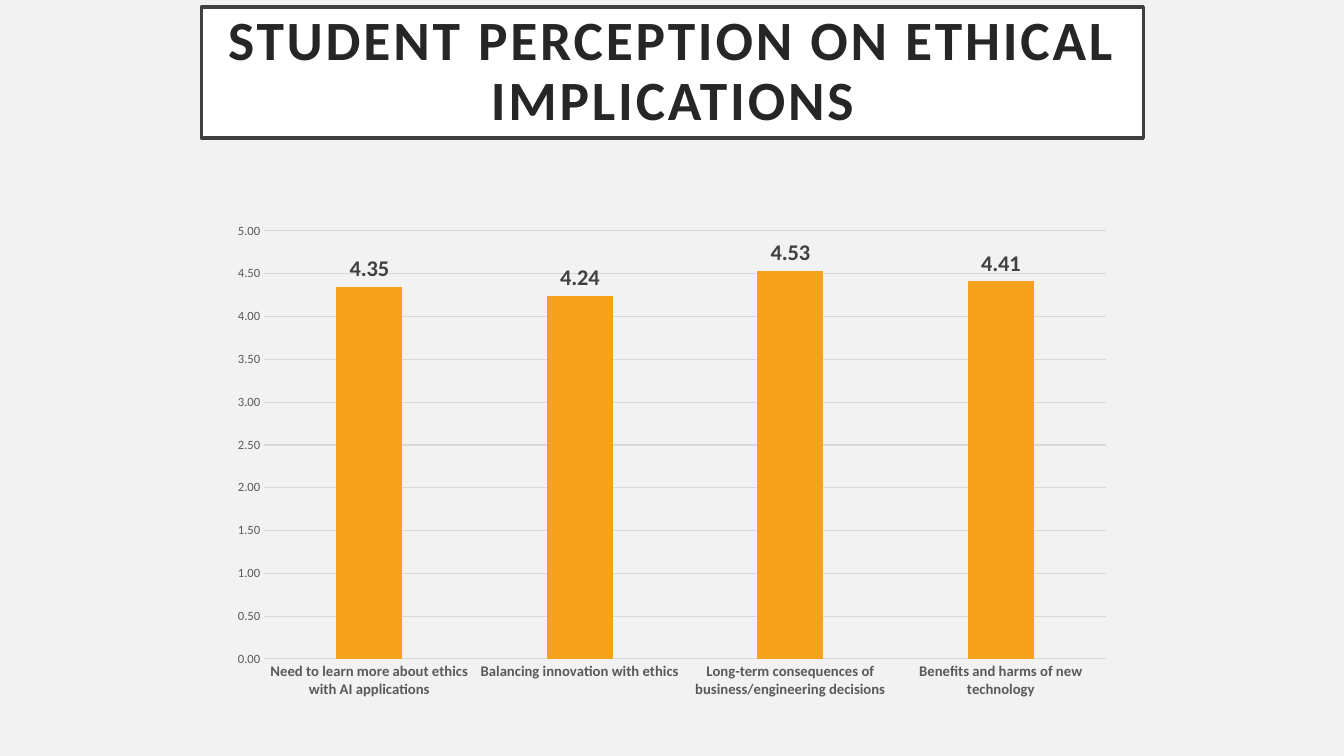
from pptx import Presentation
from pptx.chart.data import CategoryChartData
from pptx.dml.color import RGBColor
from pptx.enum.chart import XL_CHART_TYPE as ChartType, XL_LABEL_POSITION as LabelPos, XL_TICK_MARK as Tick
from pptx.enum.shapes import MSO_SHAPE as Shape
from pptx.enum.text import MSO_ANCHOR as Anchor, PP_ALIGN as Align
from pptx.util import Inches, Pt

# Content
TITLE = "STUDENT PERCEPTION ON ETHICAL IMPLICATIONS"
RATINGS = {
    "Need to learn more about ethics with AI applications": 4.35,
    "Balancing innovation with ethics": 4.24,
    "Long-term consequences of business/engineering decisions": 4.53,
    "Benefits and harms of new technology": 4.41,
}
COLORS = {
    "background": "F2F2F2", "box": "FFFFFF", "border": "404040", "title": "262626",
    "bar": "F6A21D", "value": "404040", "axis": "595959", "grid": "D9D9D9",
}
FONT = "Calibri"
TITLE_BOX = (2, 0.07, 9.34, 1.3)
CHART_BOX = (2.18, 2.12, 8.97, 4.91)


def rgb(name):
    return RGBColor.from_string(COLORS[name])


def style_font(font, size, color, bold=False):
    font.name, font.size, font.bold = FONT, Pt(size), bold
    font.color.rgb = rgb(color)


def style_line(line, color, width):
    line.color.rgb = rgb(color)
    line.width = Pt(width)


def add_text(sp, text, size, color, bold=False, inset=0.2, line_spacing=0.9, tracking=2):
    tf = sp.text_frame
    tf.word_wrap = True
    tf.vertical_anchor = Anchor.MIDDLE
    tf.margin_left = tf.margin_top = tf.margin_right = tf.margin_bottom = Inches(inset)
    p = tf.paragraphs[0]
    p.alignment, p.line_spacing = Align.CENTER, line_spacing
    r = p.add_run()
    r.text = text
    style_font(r.font, size, color, bold)
    r.font._element.set("spc", str(tracking * 100))


prs = Presentation()
prs.slide_width, prs.slide_height = Inches(13.33), Inches(7.5)
s = prs.slides.add_slide(prs.slide_layouts[6])
s.background.fill.solid()
s.background.fill.fore_color.rgb = rgb("background")

# Title box
sp = s.shapes.add_shape(Shape.RECTANGLE, *map(Inches, TITLE_BOX))
sp.shadow.inherit = False
sp.fill.solid()
sp.fill.fore_color.rgb = rgb("box")
style_line(sp.line, "border", 2.5)
add_text(sp, TITLE, size=39.6, color="title", bold=True)

# Column chart
data = CategoryChartData(number_format="0.00")
data.categories = list(RATINGS)
data.add_series("Series 1", list(RATINGS.values()))
chart = s.shapes.add_chart(ChartType.COLUMN_CLUSTERED, *map(Inches, CHART_BOX), data).chart
chart.has_legend = chart.has_title = False
chart.font.name, chart.font.size = FONT, Pt(10)

# Bars and value labels
plot = chart.plots[0]
plot.gap_width, plot.overlap, plot.vary_by_categories = 219, -27, False
bars = plot.series[0]
bars.format.fill.solid()
bars.format.fill.fore_color.rgb = rgb("bar")
labels = bars.data_labels
labels.show_value = True
labels.position = LabelPos.OUTSIDE_END
labels.number_format, labels.number_format_is_linked = "0.00", False
style_font(labels.font, 16, "value", bold=True)

# Axes
cat_axis, val_axis = chart.category_axis, chart.value_axis
for axis, size, bold in ((cat_axis, 10.5, True), (val_axis, 9, False)):
    axis.major_tick_mark = axis.minor_tick_mark = Tick.NONE
    style_font(axis.tick_labels.font, size, "axis", bold)
style_line(cat_axis.format.line, "grid", 0.75)
val_axis.format.line.fill.background()
val_axis.minimum_scale, val_axis.maximum_scale, val_axis.major_unit = 0, 5, 0.5
val_axis.tick_labels.number_format = "0.00"
val_axis.tick_labels.number_format_is_linked = False
val_axis.has_major_gridlines = True
style_line(val_axis.major_gridlines.format.line, "grid", 0.75)

prs.save("out.pptx")
